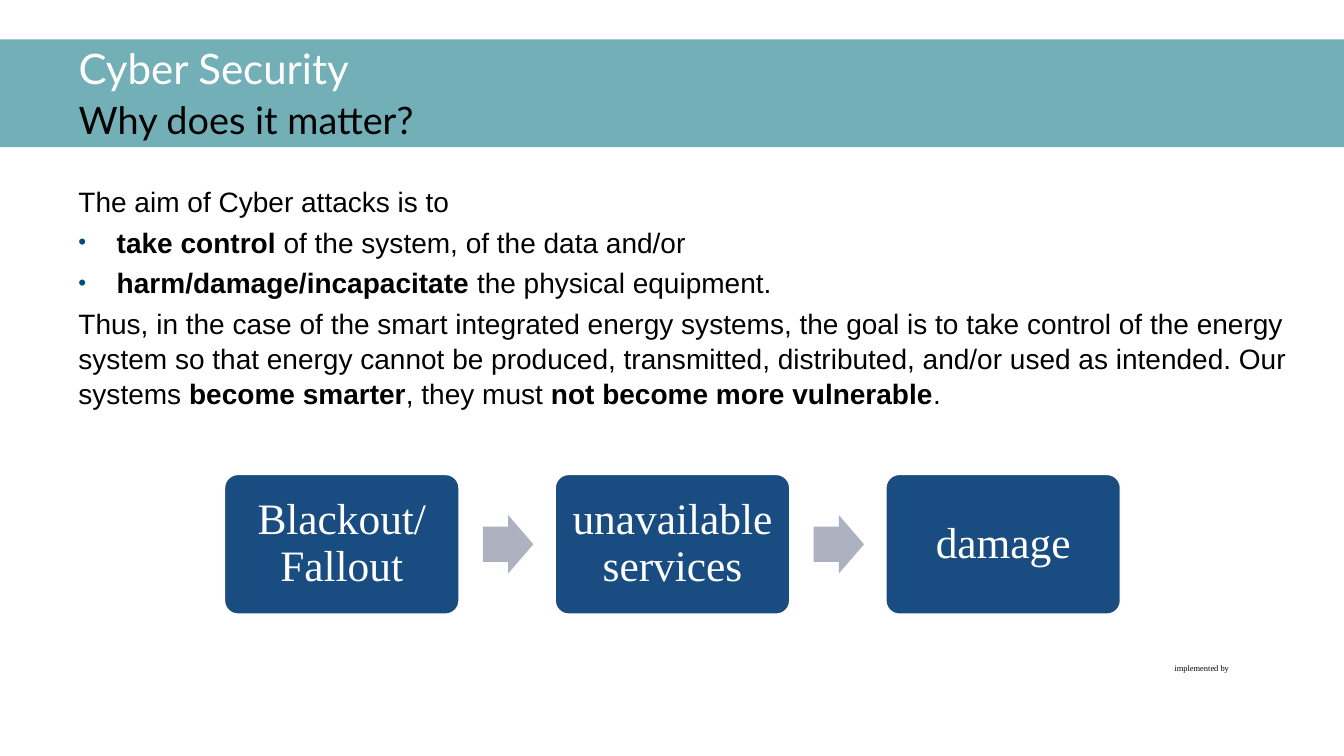
from dataclasses import dataclass

import pptx
import pptx.dml.color
import pptx.enum.shapes
import pptx.enum.text
import pptx.oxml
import pptx.oxml.ns
import pptx.util
from pptx.util import Inches

SHAPE = pptx.enum.shapes.MSO_SHAPE
ALIGN = pptx.enum.text.PP_ALIGN
ANCHOR = pptx.enum.text.MSO_ANCHOR


@dataclass(frozen=True)
class Theme:
    band: str = "73AFB7"
    box: str = "194C80"
    arrow: str = "ACB2C0"
    bullet: str = "004F80"
    white: str = "FFFFFF"
    black: str = "000000"
    title_font: str = "Lato"
    body_font: str = "Arial"
    box_font: str = "Times New Roman"
    title_size: int = 30
    subtitle_size: int = 27
    body_size: int = 20
    box_size: int = 31
    note_size: int = 6


class SlideBuilder:
    def __init__(self, prs, theme):
        self.theme = theme
        self.s = prs.slides.add_slide(prs.slide_layouts[5])

    def color(self, value):
        return pptx.dml.color.RGBColor.from_string(value)

    def style(self, r, font, size, color, bold=False):
        r.font.name = font
        r.font.size = pptx.util.Pt(size)
        r.font.color.rgb = self.color(color)
        r.font.bold = bold

    def frame(self, sp, left, top=0.04, right=0.04, bottom=0.04):
        tf = sp.text_frame
        tf.margin_left, tf.margin_top = Inches(left), Inches(top)
        tf.margin_right, tf.margin_bottom = Inches(right), Inches(bottom)
        tf.word_wrap = True
        return tf

    def shape(self, kind, left, top, width, height, fill, line=None):
        sp = self.s.shapes.add_shape(
            kind, Inches(left), Inches(top), Inches(width), Inches(height))
        sp.shadow.inherit = False
        sp.fill.solid()
        sp.fill.fore_color.rgb = self.color(fill)
        if line:
            sp.line.color.rgb = self.color(line)
            sp.line.width = pptx.util.Pt(2)
        else:
            sp.line.fill.background()
        return sp

    def title(self, heading, question):
        t = self.theme
        band = self.shape(SHAPE.RECTANGLE, 0, 0.39, 13.33, 1.07, t.band)
        sp = self.s.shapes.title
        sp.element.addprevious(band.element)  # the band lies behind the title
        sp.left, sp.top = Inches(0.68), Inches(0.39)
        sp.width, sp.height = Inches(10.21), Inches(1.07)
        tf = self.frame(sp, 0.1)
        tf.auto_size = pptx.enum.text.MSO_AUTO_SIZE.NONE
        tf.vertical_anchor = ANCHOR.MIDDLE
        tf.text = f"{heading}\v{question}"
        p = tf.paragraphs[0]
        p.alignment = ALIGN.LEFT
        p.line_spacing = pptx.util.Pt(35)
        self.style(p.runs[0], t.title_font, t.title_size, t.white)
        self.style(p.runs[1], t.title_font, t.subtitle_size, t.black)

    def bullet(self, p):
        pPr = p._p.get_or_add_pPr()
        pPr.set("marL", str(Inches(0.38)))
        pPr.set("indent", str(-Inches(0.38)))
        ns = pptx.oxml.ns.nsdecls("a")
        for xml in (
            f'<a:buClr {ns}><a:srgbClr val="{self.theme.bullet}"/></a:buClr>',
            f'<a:buSzPct {ns} val="80000"/>',
            f'<a:buFont {ns} typeface="Arial"/>',
            f'<a:buChar {ns} char="•"/>',
        ):
            pPr.append(pptx.oxml.parse_xml(xml))

    def body(self, paragraphs):
        t = self.theme
        sp = self.s.shapes.add_textbox(
            Inches(0.68), Inches(1.78), Inches(12.36), Inches(2.4))
        tf = self.frame(sp, 0.1)
        for i, (bulleted, parts) in enumerate(paragraphs):
            p = tf.add_paragraph() if i else tf.paragraphs[0]
            p.line_spacing = 1.04
            if i:
                p.space_before = pptx.util.Pt(4)
            if bulleted:
                self.bullet(p)
            for text, bold in parts:
                r = p.add_run()
                r.text = text
                self.style(r, t.body_font, t.body_size, t.black, bold)

    def step(self, text, left, top):
        t = self.theme
        sp = self.shape(SHAPE.ROUNDED_RECTANGLE, left, top, 2.34, 1.4, t.box, t.white)
        sp.adjustments[0] = 0.1
        tf = self.frame(sp, 0.13, 0.13, 0.13, 0.13)
        tf.vertical_anchor = ANCHOR.MIDDLE
        tf.text = text
        p = tf.paragraphs[0]
        p.alignment = ALIGN.CENTER
        p.line_spacing = 0.9
        self.style(p.runs[0], t.box_font, t.box_size, t.white)

    def arrow(self, left, top):
        sp = self.shape(SHAPE.RIGHT_ARROW, left, top, 0.5, 0.58, self.theme.arrow)
        sp.adjustments[0], sp.adjustments[1] = 0.6, 0.5

    def note(self, text):
        t = self.theme
        sp = self.s.shapes.add_textbox(
            Inches(11.65), Inches(6.58), Inches(0.54), Inches(0.1))
        tf = self.frame(sp, 0, 0, 0, 0)
        tf.word_wrap = False
        tf.text = text
        self.style(tf.paragraphs[0].runs[0], t.box_font, t.note_size, t.black)


def main():
    prs = pptx.Presentation()
    prs.slide_width, prs.slide_height = Inches(13.33), Inches(7.5)
    slide = SlideBuilder(prs, Theme())

    # Title band and footer note
    slide.title("Cyber Security", "Why does it matter?")
    slide.note("implemented by")

    # Body text: (bulleted, [(text, bold), ...])
    slide.body([
        (False, [("The aim of Cyber attacks is to", False)]),
        (True, [("take control ", True),
                ("of the system, of the data and/or", False)]),
        (True, [("harm/damage/incapacitate ", True),
                ("the physical equipment.", False)]),
        (False, [("Thus, in the case of the smart integrated energy systems, the goal "
                  "is to take control of the energy system so that energy cannot be "
                  "produced, transmitted, distributed, and/or used as intended. "
                  "Our systems", False),
                 (" become smarter", True),
                 (", they must ", False),
                 ("not become more vulnerable", True),
                 (".", False)]),
    ])

    # Chain of consequences
    steps = ["Blackout/ Fallout", "unavailable services", "damage"]
    for i, text in enumerate(steps):
        left = 2.22 + 3.28 * i
        slide.step(text, left, 4.7)
        if i < len(steps) - 1:
            slide.arrow(left + 2.57, 5.11)

    prs.save("out.pptx")


if __name__ == "__main__":
    main()
